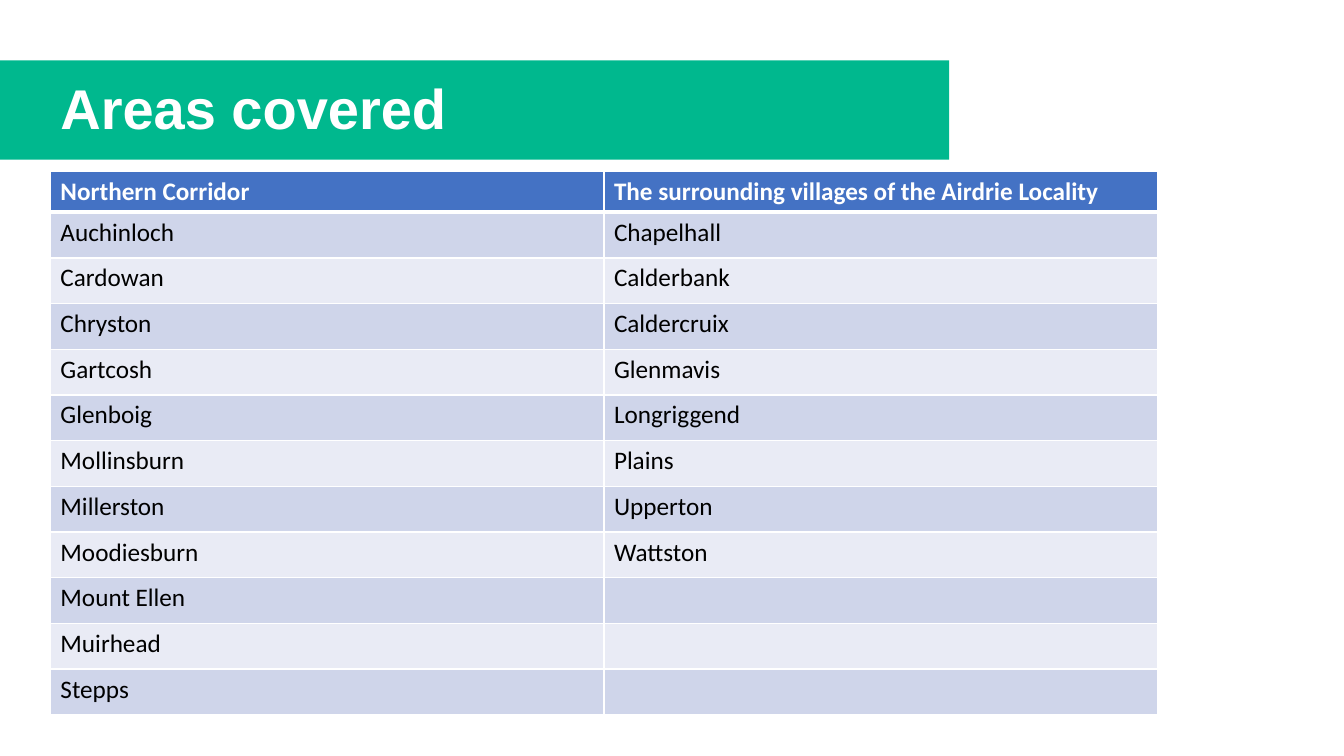
from itertools import zip_longest

from lxml import etree
from pptx import Presentation
from pptx import util as u
from pptx.dml import color
from pptx.enum import shapes, text
from pptx.oxml import ns

COLORS = {
    "band": "00B88E",
    "header": "4472C4",
    "odd": "CFD5EA",
    "even": "E9EBF5",
    "white": "FFFFFF",
    "black": "000000",
}
COLUMNS, ROWS = 80, 45
UNIT = u.Inches(7.5) / ROWS

NORTHERN = ["Auchinloch", "Cardowan", "Chryston", "Gartcosh", "Glenboig", "Mollinsburn",
            "Millerston", "Moodiesburn", "Mount Ellen", "Muirhead", "Stepps"]
AIRDRIE = ["Chapelhall", "Calderbank", "Caldercruix", "Glenmavis", "Longriggend",
           "Plains", "Upperton", "Wattston"]
HEADINGS = ("Northern Corridor", "The surrounding villages of the Airdrie Locality")


def grid(*lengths):
    return [u.Emu(round(n * UNIT)) for n in lengths]


class SlideBuilder:
    def __init__(self, prs):
        self.s = prs.slides.add_slide(prs.slide_layouts[5])

    def rgb(self, name):
        return color.RGBColor.from_string(COLORS[name])

    def style(self, p, font, size, name, bold):
        p.font.name, p.font.size, p.font.bold = font, u.Pt(size), bold
        p.font.color.rgb = self.rgb(name)

    def band(self, *box):
        sp = self.s.shapes.add_shape(shapes.MSO_SHAPE.RECTANGLE, *grid(*box))
        sp.shadow.inherit = False
        sp.fill.solid()
        sp.fill.fore_color.rgb = self.rgb("band")
        sp.line.fill.background()
        self.s.shapes.title.element.addprevious(sp.element)

    def title(self, words, *box):
        sp = self.s.shapes.title
        sp.left, sp.top, sp.width, sp.height = grid(*box)
        tf = sp.text_frame
        tf.text = words
        tf.word_wrap = True
        tf.auto_size = text.MSO_AUTO_SIZE.NONE
        tf.vertical_anchor = text.MSO_ANCHOR.MIDDLE
        p = tf.paragraphs[0]
        p.alignment = text.PP_ALIGN.LEFT
        p.line_spacing = 0.9
        self.style(p, "Arial", 40, "white", True)

    def borders(self, cell, **widths):
        tc_pr = cell._tc.get_or_add_tcPr()
        for i, (side, width) in enumerate(widths.items()):
            ln = etree.Element(ns.qn(f"a:ln{side}"), w=str(u.Pt(width)))
            fill = etree.SubElement(ln, ns.qn("a:solidFill"))
            etree.SubElement(fill, ns.qn("a:srgbClr"), val=COLORS["white"])
            tc_pr.insert(i, ln)

    def table(self, rows, left, top, width, header_height, row_height):
        height = header_height + row_height * (len(rows) - 1)
        frame = self.s.shapes.add_table(len(rows), len(rows[0]), *grid(left, top, width, height))
        for i, row in enumerate(rows):
            is_header = i == 0
            fill = "header" if is_header else "odd" if i % 2 else "even"
            frame.table.rows[i].height = grid(header_height if is_header else row_height)[0]
            for j, words in enumerate(row):
                cell = frame.table.cell(i, j)
                cell.text = words
                cell.fill.solid()
                cell.fill.fore_color.rgb = self.rgb(fill)
                self.borders(cell, L=1, R=1, T=3 if i == 1 else 1, B=3 if is_header else 1)
                self.style(cell.text_frame.paragraphs[0], "Calibri", 18,
                           "white" if is_header else "black", is_header)


def main():
    prs = Presentation()
    prs.slide_width, prs.slide_height = grid(COLUMNS, ROWS)
    slide = SlideBuilder(prs)
    slide.band(0, 3.6, 56.5, 5.9)
    slide.title("Areas covered", 3, 4.55, 52.4, 4.15)
    villages = list(zip_longest(NORTHERN, AIRDRIE, fillvalue=""))
    slide.table([HEADINGS] + villages, 3, 10.2, 65.9, 2.4, 2.72)
    prs.save("out.pptx")


if __name__ == "__main__":
    main()
